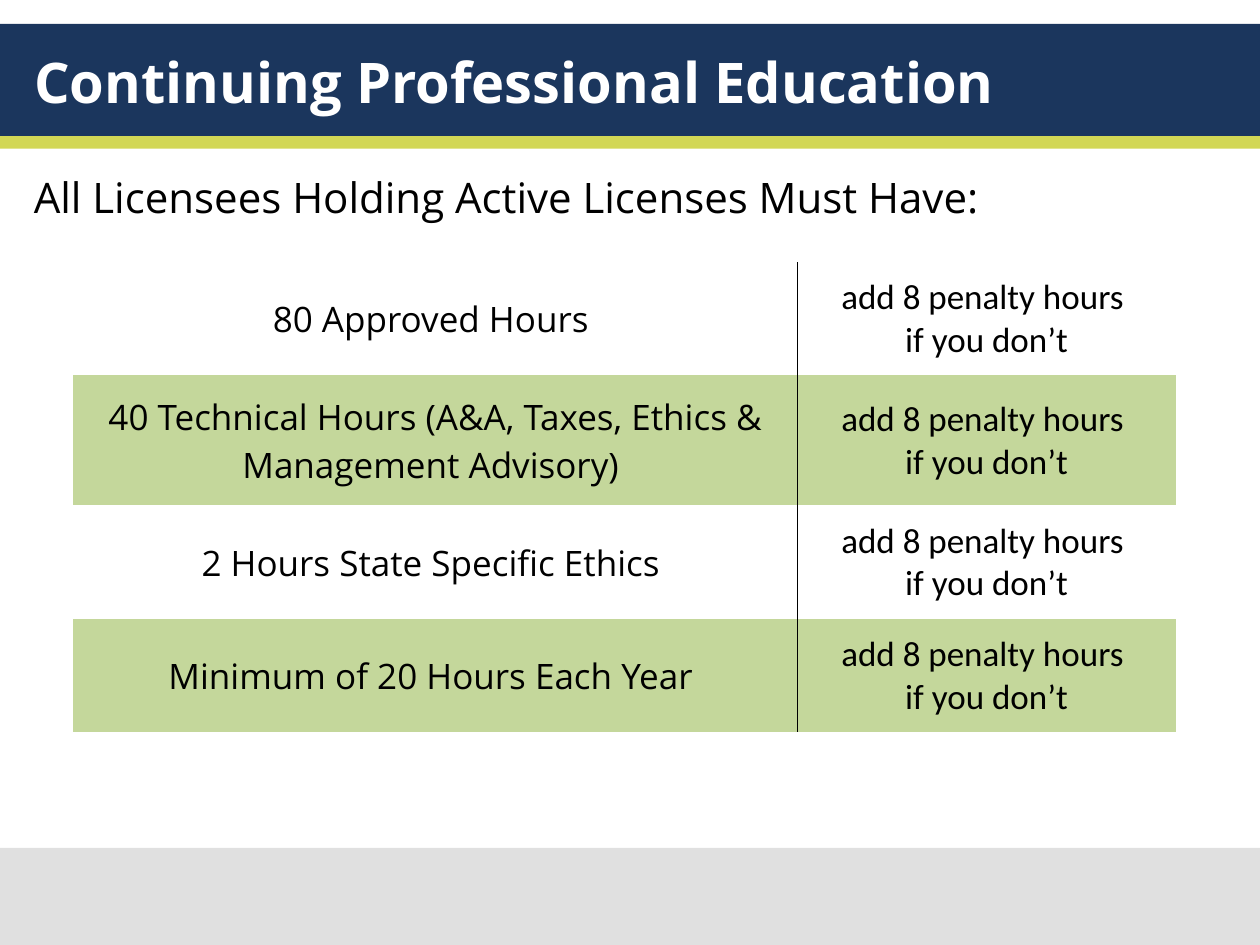
from lxml import etree
from pptx import Presentation
from pptx.dml.color import RGBColor
from pptx.enum.shapes import MSO_SHAPE
from pptx.enum.text import MSO_ANCHOR, PP_ALIGN
from pptx.oxml import parse_xml
from pptx.oxml.ns import qn
from pptx.util import Inches, Pt

RECT = MSO_SHAPE.RECTANGLE
MIDDLE = MSO_ANCHOR.MIDDLE
TOP = MSO_ANCHOR.TOP
LEFT = PP_ALIGN.LEFT
CENTER = PP_ALIGN.CENTER

NAVY = "1B365D"
LIME = "D2D755"
GREY = "E0E0E0"
GREEN = "C4D79B"
BLACK = "000000"
WHITE = "FFFFFF"
HEADING_FONT = "Open Sans"
PENALTY_FONT = "Calibri"
NO_STYLE = "{2D5ABB26-0587-4C30-8999-92F81FD0307C}"
DRAWING_NS = "http://schemas.openxmlformats.org/drawingml/2006/main"

BANDS = [(0.19, 0.89, NAVY), (1.08, 0.1, LIME), (6.73, 0.77, GREY)]
REQUIREMENTS = [
    "80 Approved Hours ",
    "40 Technical Hours (A&A, Taxes, Ethics & Management Advisory) ",
    "2 Hours State Specific Ethics ",
    "Minimum of 20 Hours Each Year ",
]
PENALTY = "add 8 penalty hours \nif you don’t"
COLUMN_WIDTHS = [5.75, 3]
ROW_HEIGHTS = [0.9, 1.03, 0.9, 0.9]


def color(value):
    return RGBColor.from_string(value)


def write_text(tf, text, size=20, font=HEADING_FONT, fill=BLACK, bold=False, align=LEFT):
    tf.word_wrap = True
    for i, line in enumerate(text.split("\n")):
        p = tf.paragraphs[0] if i == 0 else tf.add_paragraph()
        p.alignment = align
        r = p.add_run()
        r.text = line
        r.font.size = Pt(size)
        r.font.name = font
        r.font.bold = bold
        r.font.color.rgb = color(fill)


def add_band(s, top, height, fill):
    sp = s.shapes.add_shape(RECT, 0, Inches(top), Inches(10), Inches(height))
    sp.shadow.inherit = False
    sp.fill.solid()
    sp.fill.fore_color.rgb = color(fill)
    sp.line.fill.background()


def add_title(s, text):
    title = s.shapes.title
    title.left, title.top = Inches(0.17), Inches(0.19)
    title.width, title.height = Inches(9.67), Inches(0.9)
    title.text_frame.vertical_anchor = MIDDLE
    write_text(title.text_frame, text, size=32, fill=WHITE, bold=True)
    s.shapes.element.append(title.element)


def add_intro(s, text):
    sp = s.shapes.add_textbox(Inches(0.17), Inches(1.31), Inches(9.67), Inches(5.42))
    sp.text_frame.vertical_anchor = TOP
    write_text(sp.text_frame, text, size=24)


def set_border(cell, side):
    border = parse_xml(
        f'<a:{side} xmlns:a="{DRAWING_NS}" w="{Pt(0.5)}"><a:solidFill>'
        f'<a:srgbClr val="{BLACK}"/></a:solidFill></a:{side}>'
    )
    cell._tc.get_or_add_tcPr().insert(0, border)


def format_cell(cell, text, font, side, shaded):
    cell.vertical_anchor = MIDDLE
    cell.margin_left = cell.margin_top = cell.margin_right = Inches(0.01)
    cell.margin_bottom = 0
    write_text(cell.text_frame, text, font=font, align=CENTER)
    if shaded:
        cell.fill.solid()
        cell.fill.fore_color.rgb = color(GREEN)
    else:
        cell.fill.background()
    set_border(cell, side)


def add_requirements_table(s):
    frame = s.shapes.add_table(
        len(REQUIREMENTS), len(COLUMN_WIDTHS), Inches(0.58), Inches(2.08),
        Inches(sum(COLUMN_WIDTHS)), Inches(sum(ROW_HEIGHTS)),
    )
    table = frame.table
    table.first_row = False
    table.horz_banding = False
    for style in frame.element.iter(qn("a:tableStyleId")):
        style.text = NO_STYLE
    for column, width in zip(table.columns, COLUMN_WIDTHS):
        column.width = Inches(width)
    for i, (requirement, height) in enumerate(zip(REQUIREMENTS, ROW_HEIGHTS)):
        table.rows[i].height = Inches(height)
        shaded = i % 2 == 1
        format_cell(table.cell(i, 0), requirement, HEADING_FONT, "lnR", shaded)
        format_cell(table.cell(i, 1), PENALTY, PENALTY_FONT, "lnL", shaded)


def main():
    prs = Presentation()
    prs.slide_width, prs.slide_height = Inches(10), Inches(7.5)
    s = prs.slides.add_slide(prs.slide_layouts[5])
    for top, height, fill in BANDS:
        add_band(s, top, height, fill)
    add_intro(s, "All Licensees Holding Active Licenses Must Have:")
    add_requirements_table(s)
    add_title(s, "Continuing Professional Education")
    prs.save("out.pptx")


if __name__ == "__main__":
    main()
